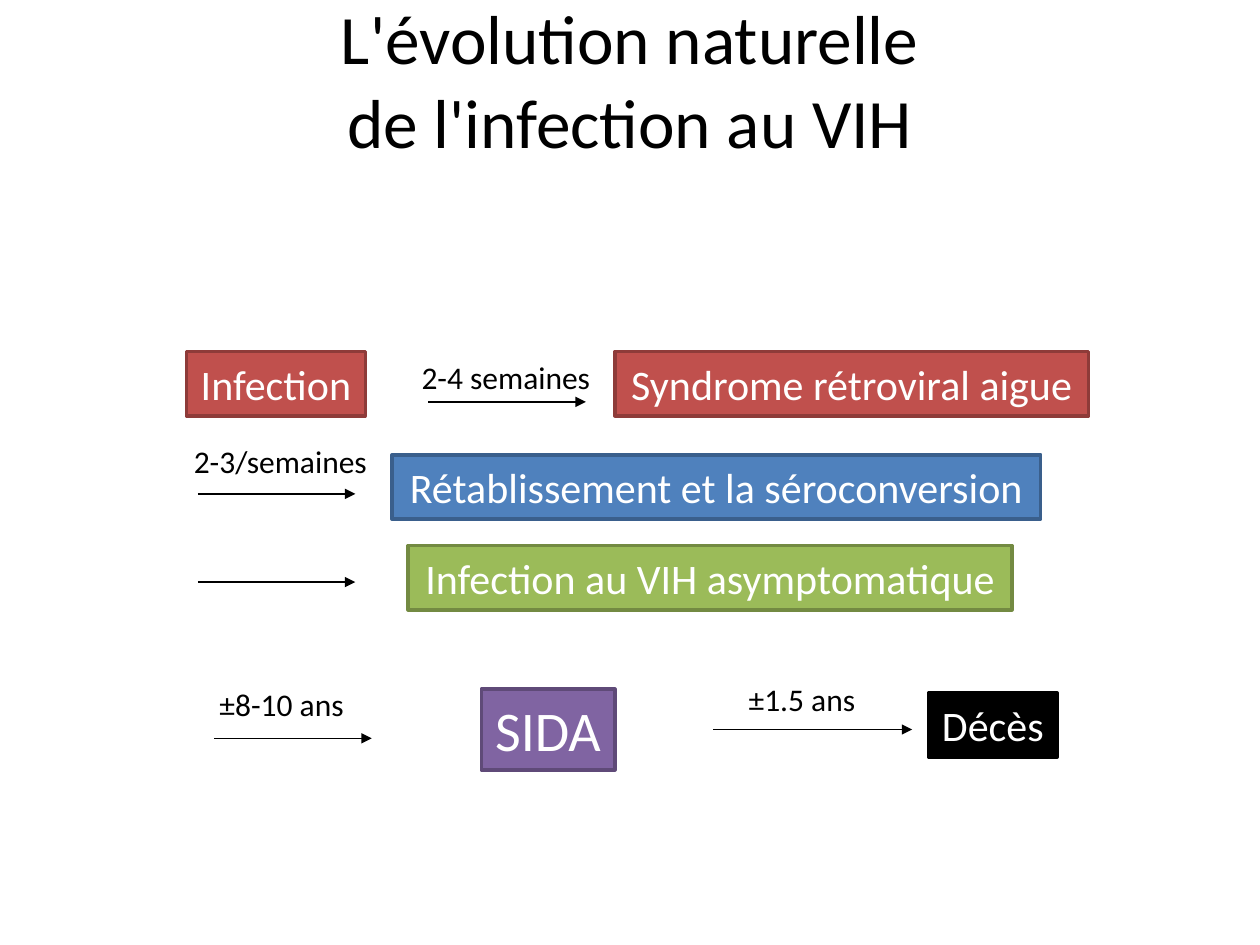
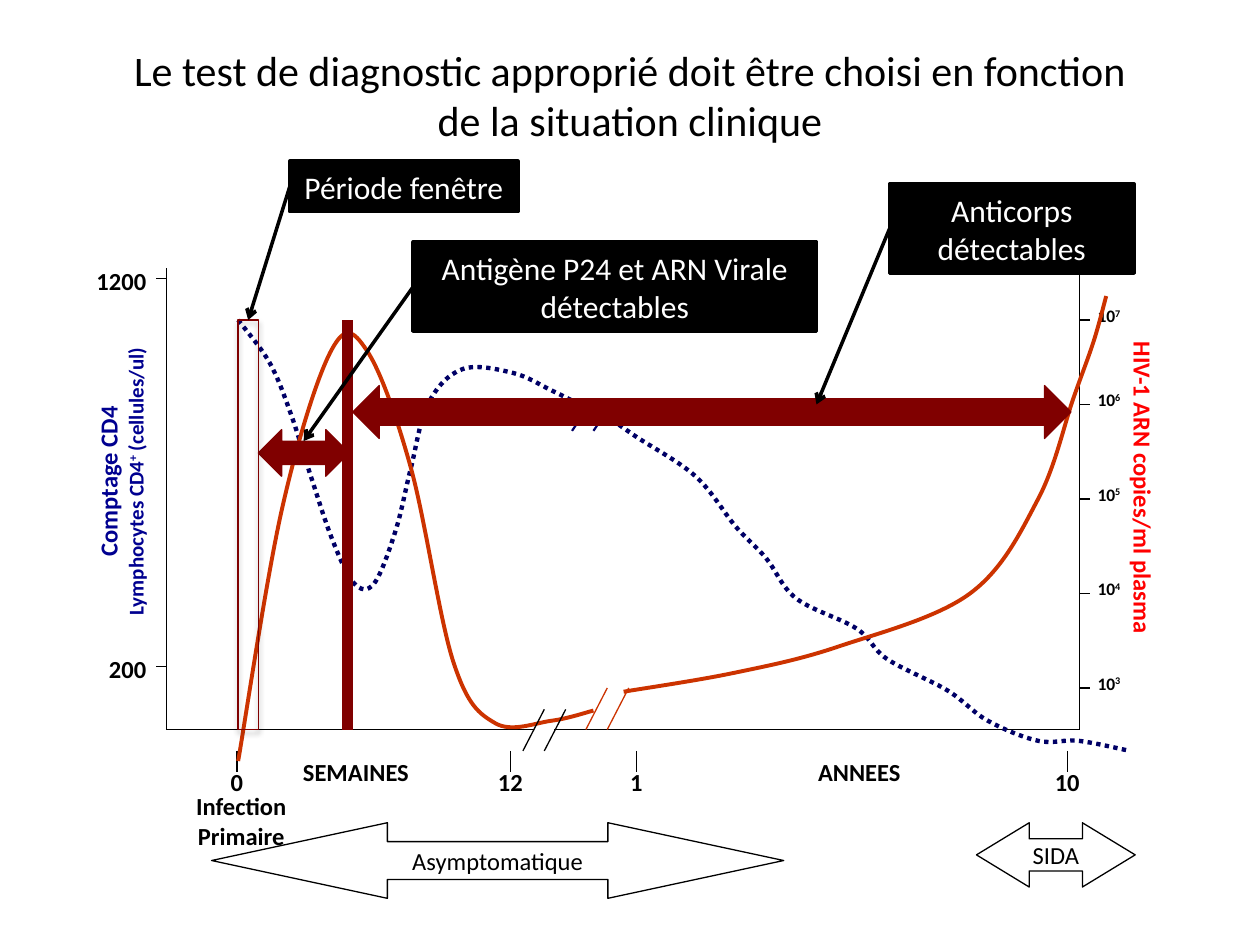
from pptx import Presentation
from pptx.dml.color import RGBColor
from pptx.enum.dml import MSO_LINE
from pptx.enum.shapes import MSO_CONNECTOR, MSO_SHAPE
from pptx.enum.text import MSO_ANCHOR, PP_ALIGN
from pptx.oxml.ns import qn
from pptx.oxml.xmlchemy import OxmlElement
from pptx.util import Cm, Pt

STRAIGHT = MSO_CONNECTOR.STRAIGHT
RECT, DOUBLE_ARROW = MSO_SHAPE.RECTANGLE, MSO_SHAPE.LEFT_RIGHT_ARROW
LEFT, CENTER, RIGHT = PP_ALIGN.LEFT, PP_ALIGN.CENTER, PP_ALIGN.RIGHT
TOP, MIDDLE = MSO_ANCHOR.TOP, MSO_ANCHOR.MIDDLE
DOTTED = MSO_LINE.ROUND_DOT

FONT = "Calibri"
GRID = 2.54
COLORS = {
    "black": "000000", "white": "FFFFFF",
    "red": "C0504D", "red edge": "8E3B39",
    "blue": "4F81BD", "blue edge": "3A5F8C",
    "green": "9BBB59", "green edge": "738A42",
    "purple": "8064A2", "purple edge": "5F4A78",
    "cd4 label": "000090", "cd4": "000066",
    "rna label": "FF0000", "rna": "CC3300", "maroon": "800000",
}

EVOLUTION_TITLE = "L'évolution naturelle\nde l'infection au VIH"
STAGES = [
    ("Infection", (1.48, 2.79, 1.42, 0.51), "red", "red edge", 24),
    ("Syndrome rétroviral aigue", (4.88, 2.79, 3.76, 0.51), "red", "red edge", 24),
    ("Rétablissement et la séroconversion", (3.11, 3.61, 5.15, 0.51), "blue", "blue edge", 24),
    ("Infection au VIH asymptomatique", (3.24, 4.33, 4.79, 0.51), "green", "green edge", 24),
    ("SIDA", (3.82, 5.47, 1.06, 0.64), "purple", "purple edge", 32),
    ("Décès", (7.37, 5.5, 1.02, 0.51), "black", "black", 24),
]
DELAY_ARROWS = [(3.4, 3.19, 1.25), (1.57, 3.92, 1.25), (1.57, 4.62, 1.25),
                (1.7, 5.86, 1.25), (5.66, 5.79, 1.58)]
DELAYS = [
    ("2-4 semaines", (3.24, 2.79, 1.55, 0.4)),
    ("2-3/semaines", (1.43, 3.46, 1.59, 0.4)),
    ("±8-10 ans", (1.63, 5.39, 1.21, 0.4)),
    ("±1.5 ans", (5.83, 5.35, 1.07, 0.4)),
]

TEST_TITLE = ("Le test de diagnostic approprié doit être choisi en fonction\n"
              "de la situation clinique")
AXIS_TOP, BASELINE = 2.13, 5.79
CD4_AXIS, RNA_AXIS = 1.32, 8.57
TICK = 0.08
CD4_TICKS = [("200", 5.29), ("1200", 2.21)]
RNA_TICKS = [("10^3", 5.46), ("10^4", 4.71), ("10^5", 3.96), ("10^6", 3.21), ("10^7", 2.54)]
TIME_TICKS = [("0", 1.88), ("12", 4.05), ("1", 5.05), ("10", 8.47)]
AXIS_TITLES = [
    ("Comptage CD4\nLymphocytes CD4^+^ (cellules/ul)", (-0.24, 3.55, 2.4, 0.54), 270, "cd4 label"),
    ("HIV-1 ARN copies/ml plasma", (7.8, 3.7, 2.54, 0.34), 90, "rna label"),
]
TIME_LABELS = [
    ("Infection\nPrimaire", (1.45, 6.23, 0.93, 0.57)),
    ("SEMAINES", (2.3, 5.96, 1.05, 0.34)),
    ("ANNEES", (6.38, 5.96, 0.88, 0.34)),
]
BREAKS = [
    (4.32, 5.63, 0.33, "black", 0.75),
    (4.71, 3.17, 0.25, "cd4", 1.25),
    (4.82, 5.46, 0.33, "rna", 0.75),
]
BREAK_STEP = 0.17
CD4_EARLY = [(1.89, 2.54), (2.14, 2.88), (2.31, 3.29), (2.47, 3.79), (2.64, 4.29),
             (2.81, 4.63), (2.97, 4.63), (3.14, 4.21), (3.26, 3.72), (3.4, 3.2),
             (3.67, 2.93), (4.07, 2.96), (4.38, 3.1), (4.64, 3.23)]
CD4_LATE = [(4.8, 3.29), (5.04, 3.46), (5.52, 3.78), (5.84, 4.18), (6.08, 4.43),
            (6.32, 4.75), (6.8, 4.99), (7.04, 5.23), (7.52, 5.48), (7.84, 5.72),
            (8.24, 5.88), (8.56, 5.88), (8.97, 5.96)]
RNA_EARLY = [(1.89, 6.04), (2.24, 4.03), (2.63, 2.78), (2.91, 2.78), (3.26, 3.71),
             (3.6, 5.26), (3.93, 5.74), (4.38, 5.72), (4.71, 5.64)]
RNA_LATE = [(4.95, 5.49), (5.83, 5.34), (6.66, 5.13), (7.7, 4.71), (8.24, 3.96),
            (8.52, 3.16), (8.68, 2.71), (8.78, 2.35)]
CURVES = [(CD4_LATE, "cd4", 2.5, DOTTED), (RNA_LATE, "rna", 2.25, None),
          (CD4_EARLY, "cd4", 2.5, DOTTED), (RNA_EARLY, "rna", 2.25, None)]
PHASES = [
    ("Asymptomatique", (1.68, 6.53, 4.54, 0.6), 2.325),
    ("SIDA", (7.75, 6.53, 1.26, 0.51), 0.821),
]
WINDOW = (1.89, 2.54, 0.16, 3.25)
SEROCONVERSION = 2.76
DETECTION_SPANS = [(2.8, 3.06, 5.7, 0.42), (2.05, 3.41, 0.72, 0.37)]
CALLOUTS = [
    ("Anticorps\ndétectables", (7.06, 1.46, 1.94, 0.71), (6.48, 3.21)),
    ("Période fenêtre", (2.3, 1.28, 1.81, 0.4), None),
    ("Antigène P24 et ARN Virale\ndétectables", (3.28, 1.92, 3.2, 0.71), (2.41, 3.5)),
]


def scaled(*values):
    return [Cm(value * GRID) for value in values]


def rgb(name):
    return RGBColor.from_string(COLORS[name])


def write(shape, text, size=14, later_size=None, color="black", bold=False,
          align=CENTER, anchor=TOP, wrap=False):
    frame = shape.text_frame
    frame.word_wrap = wrap
    frame.vertical_anchor = anchor
    for row, line in enumerate(text.split("\n")):
        paragraph = frame.add_paragraph() if row else frame.paragraphs[0]
        paragraph.alignment = align
        for part, words in enumerate(line.split("^")):
            run = paragraph.add_run()
            run.text = words
            run.font.name = FONT
            run.font.size = Pt(later_size if row and later_size else size)
            run.font.bold = bold
            run.font.color.rgb = rgb(color)
            if part % 2:
                run.font._element.set("baseline", "30000")


def label(slide, text, box, turn=0, **style):
    area = slide.shapes.add_textbox(*scaled(*box))
    area.rotation = turn
    write(area, text, **style)
    return area


def outline(shape, color, width, dash=None):
    shape.line.color.rgb = rgb(color)
    shape.line.width = Pt(width)
    if dash:
        shape.line.dash_style = dash


def block(slide, kind, box, fill, edge, width):
    shape = slide.shapes.add_shape(kind, *scaled(*box))
    shape.shadow.inherit = False
    if fill:
        shape.fill.solid()
        shape.fill.fore_color.rgb = rgb(fill)
    else:
        shape.fill.background()
    outline(shape, edge, width)
    return shape


def stroke(slide, start, end, color="black", width=0.75, head=None):
    line = slide.shapes.add_connector(STRAIGHT, *scaled(*start, *end))
    outline(line, color, width)
    if head:
        tip = OxmlElement("a:tailEnd")
        tip.set("type", head)
        line.line._get_or_add_ln().append(tip)
    line._element.spPr.append(OxmlElement("a:effectLst"))
    return line


def curve(slide, knots, color, width, dash):
    ends = [knots[0], *knots, knots[-1]]
    points = []
    for before, here, there, after in zip(ends, ends[1:], ends[2:], ends[3:]):
        points += [[h + (t - b) / 6 for b, h, t in zip(before, here, there)],
                   [t - (a - h) / 6 for h, t, a in zip(here, there, after)],
                   there]
    builder = slide.shapes.build_freeform(*scaled(*knots[0]))
    builder.add_line_segments([scaled(*point) for point in points], close=False)
    shape = builder.convert_to_shape()
    segments = list(shape._element.iter(qn("a:lnTo")))
    for first in range(0, len(segments), 3):
        bezier = OxmlElement("a:cubicBezTo")
        segments[first].addprevious(bezier)
        for segment in segments[first:first + 3]:
            bezier.append(segment[0])
            segment.getparent().remove(segment)
    shape.shadow.inherit = False
    shape.fill.background()
    outline(shape, color, width, dash)


def cast_shadow(shape):
    effects = shape._element.spPr.find(qn("a:effectLst"))
    shadow = OxmlElement("a:outerShdw")
    for key, value in (("blurRad", Pt(3.1)), ("dist", Pt(1.8)), ("dir", 5400000)):
        shadow.set(key, str(value))
    tone = OxmlElement("a:srgbClr")
    tone.set("val", COLORS["black"])
    alpha = OxmlElement("a:alpha")
    alpha.set("val", "35000")
    tone.append(alpha)
    shadow.append(tone)
    effects.append(shadow)


def build_evolution(slide):
    label(slide, EVOLUTION_TITLE, (0.5, 0, 9, 1.25), size=39.6, anchor=MIDDLE, wrap=True)
    for text, box, fill, edge, size in STAGES:
        stage = block(slide, RECT, box, fill, edge, 2)
        write(stage, text, size=size, color="white", anchor=MIDDLE)
    for x, y, length in DELAY_ARROWS:
        stroke(slide, (x, y), (x + length, y), head="triangle")
    for text, box in DELAYS:
        label(slide, text, box, size=18)


def build_axes(slide):
    for axis in (CD4_AXIS, RNA_AXIS):
        stroke(slide, (axis, AXIS_TOP), (axis, BASELINE))
    for start, end in ((CD4_AXIS, 4.24), (4.4, RNA_AXIS)):
        stroke(slide, (start, BASELINE), (end, BASELINE))
    for text, y in CD4_TICKS:
        stroke(slide, (CD4_AXIS, y), (CD4_AXIS - TICK, y))
        label(slide, text, (0.63, y - 0.15, 0.63, 0.33), bold=True, align=RIGHT)
    for text, y in RNA_TICKS:
        stroke(slide, (RNA_AXIS + TICK, y), (RNA_AXIS, y))
        label(slide, text, (8.58, y - 0.17, 0.41, 0.27), size=10, bold=True, align=RIGHT)
    for text, x in TIME_TICKS:
        stroke(slide, (x, 5.96), (x, 6.13))
        label(slide, text, (x - 0.21, 6.04, 0.42, 0.33), bold=True)
    for text, box, turn, color in AXIS_TITLES:
        label(slide, text, box, turn, later_size=12, color=color, bold=True)
    for text, box in TIME_LABELS:
        label(slide, text, box, bold=True)


def build_test_choice(slide):
    build_axes(slide)
    for knots, color, width, dash in CURVES:
        curve(slide, knots, color, width, dash)
    for x, y, drop, color, width in BREAKS:
        for left in (x, x + BREAK_STEP):
            stroke(slide, (left, y), (left - BREAK_STEP, y + drop), color, width)
    for text, box, tip in PHASES:
        phase = block(slide, DOUBLE_ARROW, box, None, "black", 0.75)
        phase.adjustments[1] = tip
        write(phase, text, anchor=MIDDLE)
    stroke(slide, (SEROCONVERSION, WINDOW[1]), (SEROCONVERSION, BASELINE), "maroon", 6)
    for box in DETECTION_SPANS:
        block(slide, DOUBLE_ARROW, box, "maroon", "maroon", 0.75)
    window = block(slide, RECT, WINDOW, None, "maroon", 0.75)
    cast_shadow(window)
    for text, box, target in CALLOUTS:
        callout = block(slide, RECT, box, "black", "black", 2)
        write(callout, text, size=18, color="white", anchor=MIDDLE, wrap=True)
        left, top, _, height = box
        end = target or (WINDOW[0] + WINDOW[2] / 2, WINDOW[1])
        pointer = stroke(slide, (left, top + height / 2), end, width=2, head="arrow")
        pointer.begin_connect(callout, 1)
        if not target:
            pointer.end_connect(window, 0)
    label(slide, TEST_TITLE, (0.5, 0.3, 9, 1.01), size=24, wrap=True)


def main():
    deck = Presentation()
    deck.slide_width, deck.slide_height = scaled(10, 7.5)
    for build in (build_evolution, build_test_choice):
        build(deck.slides.add_slide(deck.slide_layouts[6]))
    deck.save("out.pptx")


if __name__ == "__main__":
    main()
